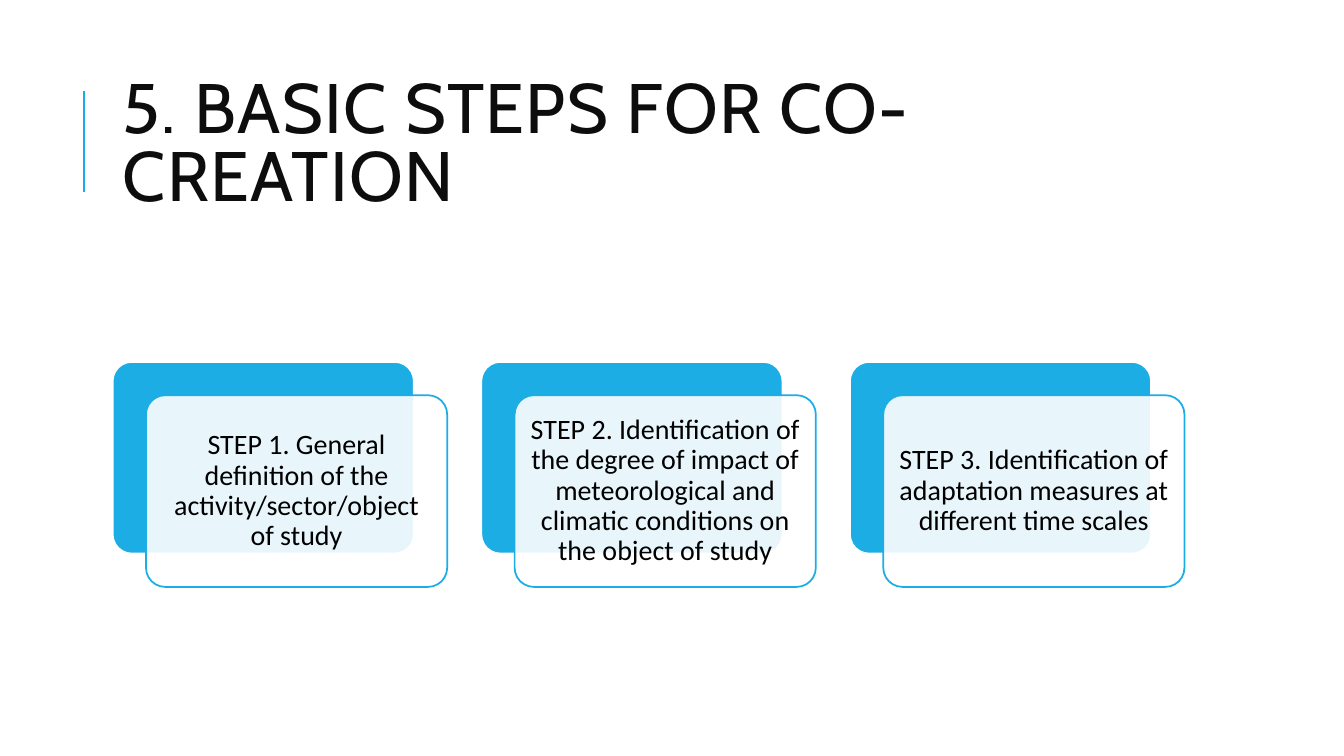
"""Builds the slide on the basic steps for co-creation."""
import pptx
import pptx.dml.color
import pptx.enum.shapes
import pptx.enum.text
import pptx.oxml.ns
import pptx.util
from lxml import etree

Cm = pptx.util.Cm
Pt = pptx.util.Pt
qn = pptx.oxml.ns.qn
BLUE = "1CADE4"
WHITE = "FFFFFF"


def paint(target, color):
    """Colours a font or line, or makes a fill solid."""
    if hasattr(target, "solid"):
        target.solid()
        target = target.fore_color
    else:
        target = target.color
    target.rgb = pptx.dml.color.RGBColor.from_string(color)


def write(shape, text, font, size, color, space):
    """Puts one formatted paragraph into a shape."""
    frame = shape.text_frame
    frame.word_wrap = True
    frame.vertical_anchor = pptx.enum.text.MSO_ANCHOR.MIDDLE
    frame.text = text
    para = frame.paragraphs[0]
    para.line_spacing = space
    run = para.runs[0]
    run.font.name = font
    run.font.size = Pt(size)
    paint(run.font, color)
    return para


deck = pptx.Presentation()
deck.slide_width = Cm(33.87)
deck.slide_height = Cm(19.05)
slide = deck.slides.add_slide(deck.slide_layouts[6])
shapes = slide.shapes

rule = shapes.add_connector(
    pptx.enum.shapes.MSO_CONNECTOR.STRAIGHT, Cm(2.11), Cm(4.83), Cm(2.11), Cm(2.29))
paint(rule.line, BLUE)
rule.line.width = Pt(1.5)
etree.SubElement(rule.element.spPr, qn("a:effectLst"))

title = shapes.add_textbox(Cm(2.84), Cm(1.63), Cm(27), Cm(4.17))
para = write(title, "5. BASIC STEPS FOR CO-CREATION", "Cabin", 50, "0D0D0D", 0.8)
para.runs[0].font.element.set("spc", "100") if hasattr(para.runs[0].font, "element") \
    else para.runs[0]._r.get_or_add_rPr().set("spc", "100")

steps = [
    "STEP 1. General definition of the activity/sector/object of study",
    "STEP 2. Identification of the degree of impact of meteorological "
    "and climatic conditions on the object of study",
    "STEP 3. Identification of adaptation measures at different time scales",
]
for num, step in enumerate(steps):
    left = 2.84 + 9.29 * num
    for shift, fill, edge in [(0, BLUE, WHITE), (0.84, WHITE, BLUE)]:
        card = shapes.add_shape(
            pptx.enum.shapes.MSO_SHAPE.ROUNDED_RECTANGLE,
            Cm(left + shift), Cm(9.12 + shift), Cm(7.59), Cm(4.83))
        card.adjustments[0] = 0.1
        card.shadow.inherit = False
        paint(card.fill, fill)
        paint(card.line, edge)
        card.line.width = Pt(1.25)

    tint = card.element.spPr.find(qn("a:solidFill")).find(qn("a:srgbClr"))
    etree.SubElement(tint, qn("a:alpha"), val="90000")
    para = write(card, step, "Calibri", 20, "000000", 0.9)
    para.alignment = pptx.enum.text.PP_ALIGN.CENTER
    frame = card.text_frame
    frame.margin_left = frame.margin_right = Cm(0.2)
    frame.margin_top = frame.margin_bottom = Cm(0.2)

deck.save("out.pptx")
